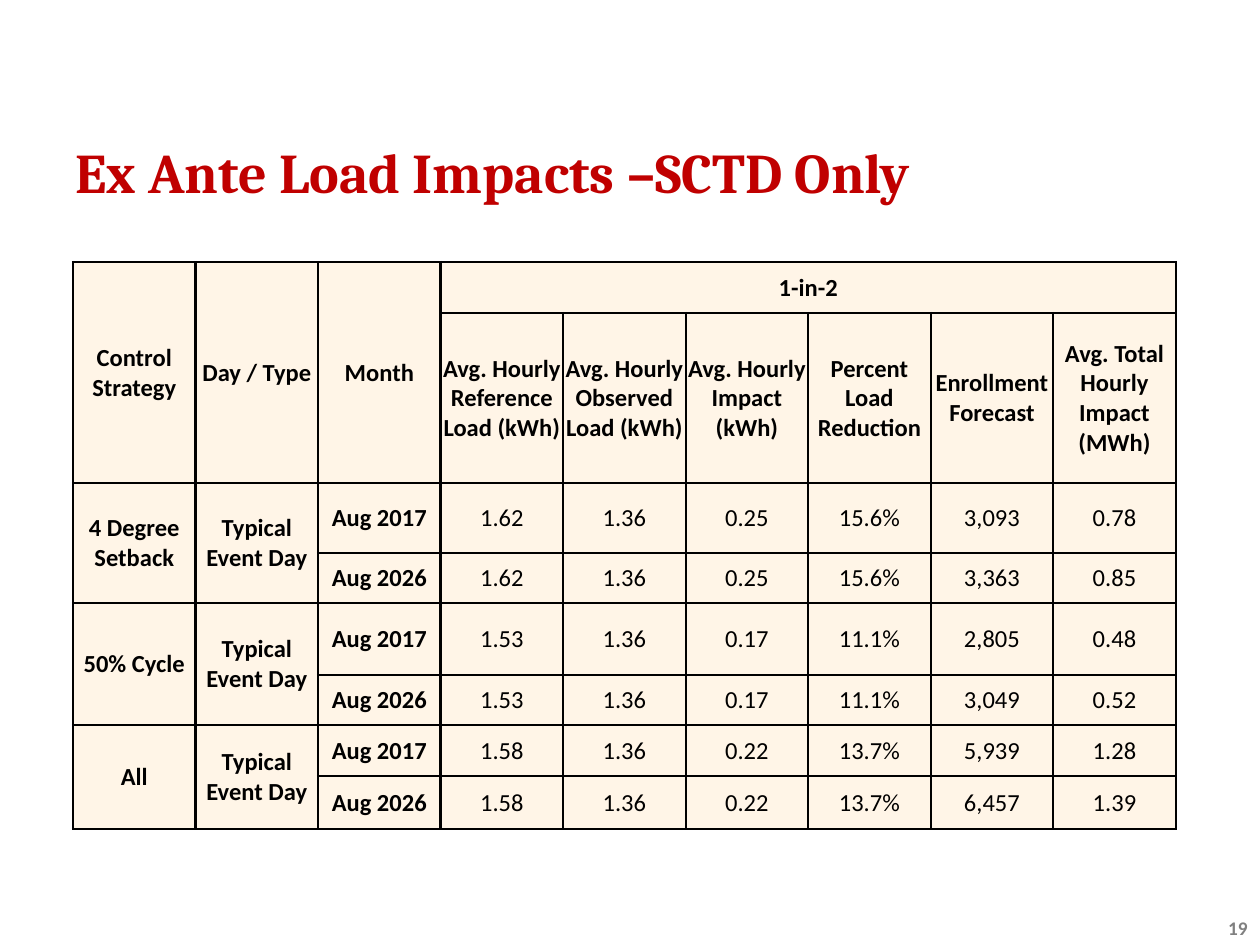
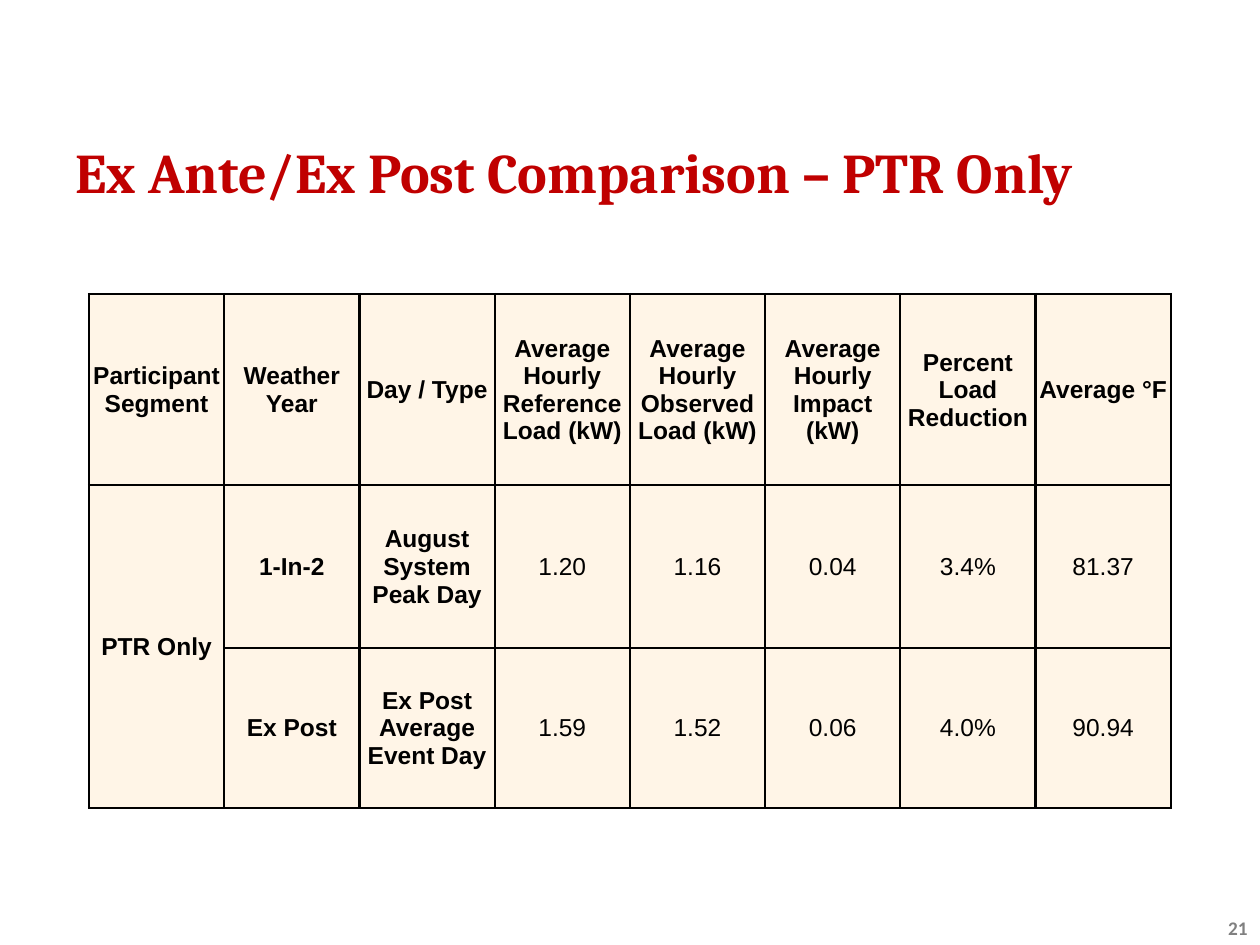
import pptx
import pptx.dml.color
import pptx.enum.text
import pptx.oxml
import pptx.oxml.ns
import pptx.util

PX = 914400 / 126
COLORS = {"title": "C00000", "page": "808080", "text": "000000", "cell": "FFF5E7", "border": "000000"}
ALIGN = pptx.enum.text.PP_ALIGN
MIDDLE = pptx.enum.text.MSO_ANCHOR.MIDDLE


def px(length):
    return pptx.util.Emu(round(length * PX))


def rgb(name):
    return pptx.dml.color.RGBColor.from_string(COLORS[name])


class Deck:
    def __init__(self):
        self.prs = pptx.Presentation()
        self.prs.slide_width, self.prs.slide_height = px(1260), px(945)
        self.slide = None

    def add_slide(self, title, page):
        self.slide = self.prs.slides.add_slide(self.prs.slide_layouts[6])
        self.text(title, (63, 126, 1134, 91), "Cambria", 32, "title", ALIGN.LEFT)
        self.text(page, (966, 903, 294, 50), "Calibri", 11, "page", ALIGN.RIGHT)

    def style(self, paragraph, font, size, color, align, bold=True):
        paragraph.alignment = align
        paragraph.font.name = font
        paragraph.font.size = pptx.util.Pt(size)
        paragraph.font.bold = bold
        paragraph.font.color.rgb = rgb(color)

    def text(self, words, place, font, size, color, align):
        frame = self.slide.shapes.add_textbox(*map(px, place)).text_frame
        frame.word_wrap = True
        frame.vertical_anchor = MIDDLE
        frame.text = words
        self.style(frame.paragraphs[0], font, size, color, align)

    def border(self, cell):
        properties = cell._tc.get_or_add_tcPr()
        for side in ("lnL", "lnR", "lnT", "lnB"):
            properties.append(pptx.oxml.parse_xml(
                f'<a:{side} {pptx.oxml.ns.nsdecls("a")} w="{pptx.util.Pt(1.5)}">'
                f'<a:solidFill><a:srgbClr val="{COLORS["border"]}"/></a:solidFill></a:{side}>'))

    def merge(self, table, rows):
        for r, row in enumerate(rows):
            for c, words in enumerate(row):
                if words is None:
                    continue
                last_row, last_col = r, c
                while last_col + 1 < len(row) and row[last_col + 1] is None:
                    last_col += 1
                while last_row + 1 < len(rows) and rows[last_row + 1][c] is None:
                    last_row += 1
                if (last_row, last_col) != (r, c):
                    table.cell(r, c).merge(table.cell(last_row, last_col))

    def table(self, rows, left, top, width, heights, font, header_rows, label_cols=3):
        count = len(rows[0])
        table = self.slide.shapes.add_table(
            len(rows), count, *map(px, (left, top, width, sum(heights)))).table
        table.first_row = table.horz_banding = False
        for column in table.columns:
            column.width = px(width / count)
        for r, (row, height) in enumerate(zip(rows, heights)):
            table.rows[r].height = px(height)
            for c, words in enumerate(row):
                cell = table.cell(r, c)
                cell.margin_left = cell.margin_right = cell.margin_top = px(1)
                cell.margin_bottom = 0
                cell.vertical_anchor = MIDDLE
                self.border(cell)
                cell.fill.solid()
                cell.fill.fore_color.rgb = rgb("cell")
                cell.text = words or ""
                bold = r < header_rows or c < label_cols
                self.style(cell.text_frame.paragraphs[0], font, 14, "text", ALIGN.CENTER, bold)
        self.merge(table, rows)


def main():
    deck = Deck()

    deck.add_slide("Ex Ante Load Impacts –SCTD Only", "19")
    event_day = "Typical Event Day"
    load_impacts = [
        ["Control Strategy", "Day / Type", "Month", "1-in-2"] + [None] * 5,
        [None, None, None, "Avg. Hourly Reference Load (kWh)", "Avg. Hourly Observed Load (kWh)",
         "Avg. Hourly Impact (kWh)", "Percent Load Reduction", "Enrollment Forecast",
         "Avg. Total Hourly Impact (MWh)"],
    ]
    strategies = [
        ("4 Degree Setback", ["1.62", "1.36", "0.25", "15.6%"], ["3,093", "0.78"], ["3,363", "0.85"]),
        ("50% Cycle", ["1.53", "1.36", "0.17", "11.1%"], ["2,805", "0.48"], ["3,049", "0.52"]),
        ("All", ["1.58", "1.36", "0.22", "13.7%"], ["5,939", "1.28"], ["6,457", "1.39"]),
    ]
    for strategy, hourly, totals_2017, totals_2026 in strategies:
        load_impacts.append([strategy, event_day, "Aug 2017"] + hourly + totals_2017)
        load_impacts.append([None, None, "Aug 2026"] + hourly + totals_2026)
    deck.table(load_impacts, 73, 262, 1103, [51, 170, 70, 50, 72, 50, 51, 53], "Calibri", 2)

    deck.add_slide("Ex Ante/Ex Post Comparison – PTR Only", "21")
    comparison = [
        ["Participant Segment", "Weather Year", "Day / Type", "Average Hourly Reference Load (kW)",
         "Average Hourly Observed Load (kW)", "Average Hourly Impact (kW)",
         "Percent Load Reduction", "Average °F"],
        ["PTR Only", "1-In-2", "August System Peak Day", "1.20", "1.16", "0.04", "3.4%", "81.37"],
        [None, "Ex Post", "Ex Post Average Event Day", "1.59", "1.52", "0.06", "4.0%", "90.94"],
    ]
    deck.table(comparison, 89, 294, 1082, [191, 163, 160], "Arial", 1)

    deck.prs.save("out.pptx")


if __name__ == "__main__":
    main()
